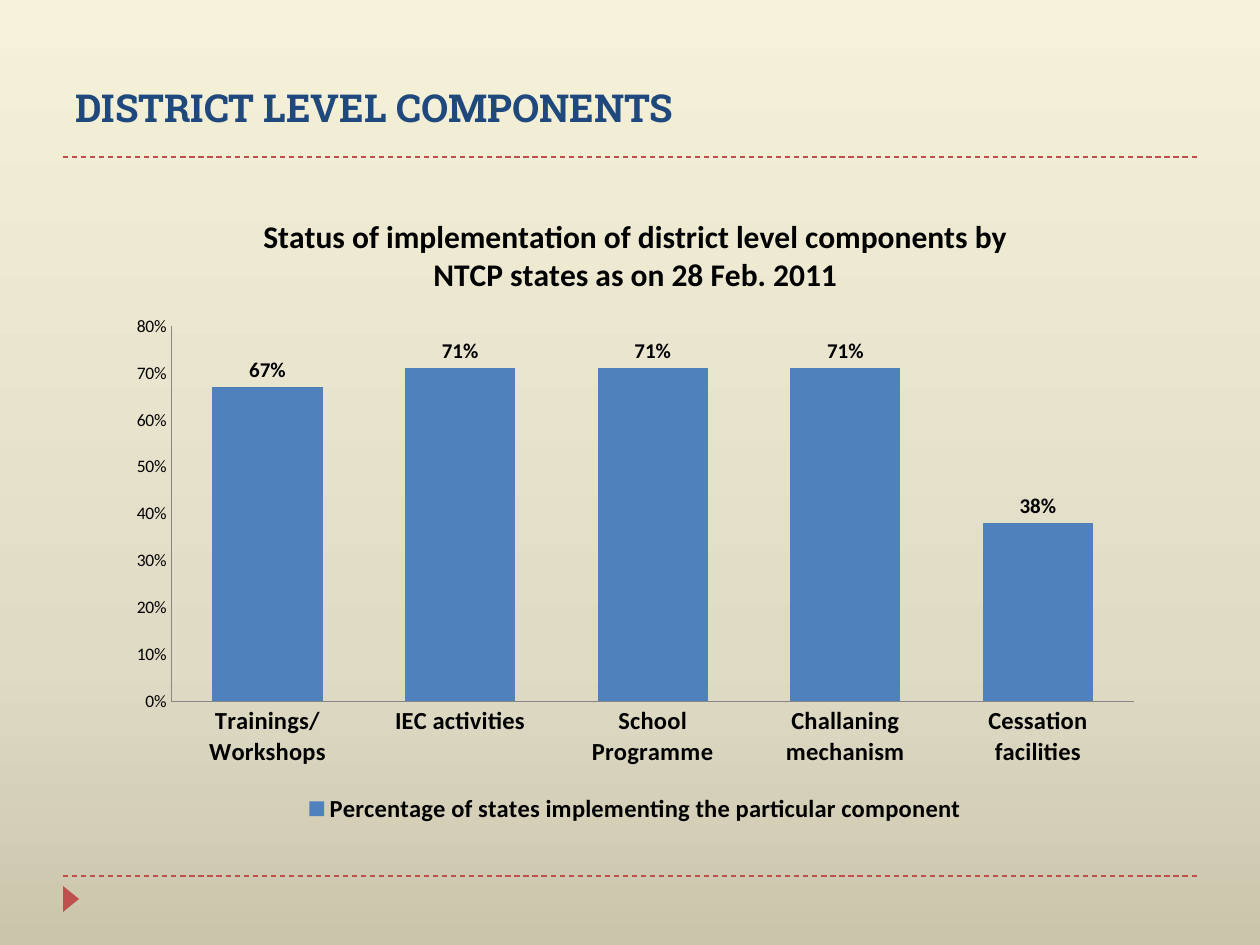
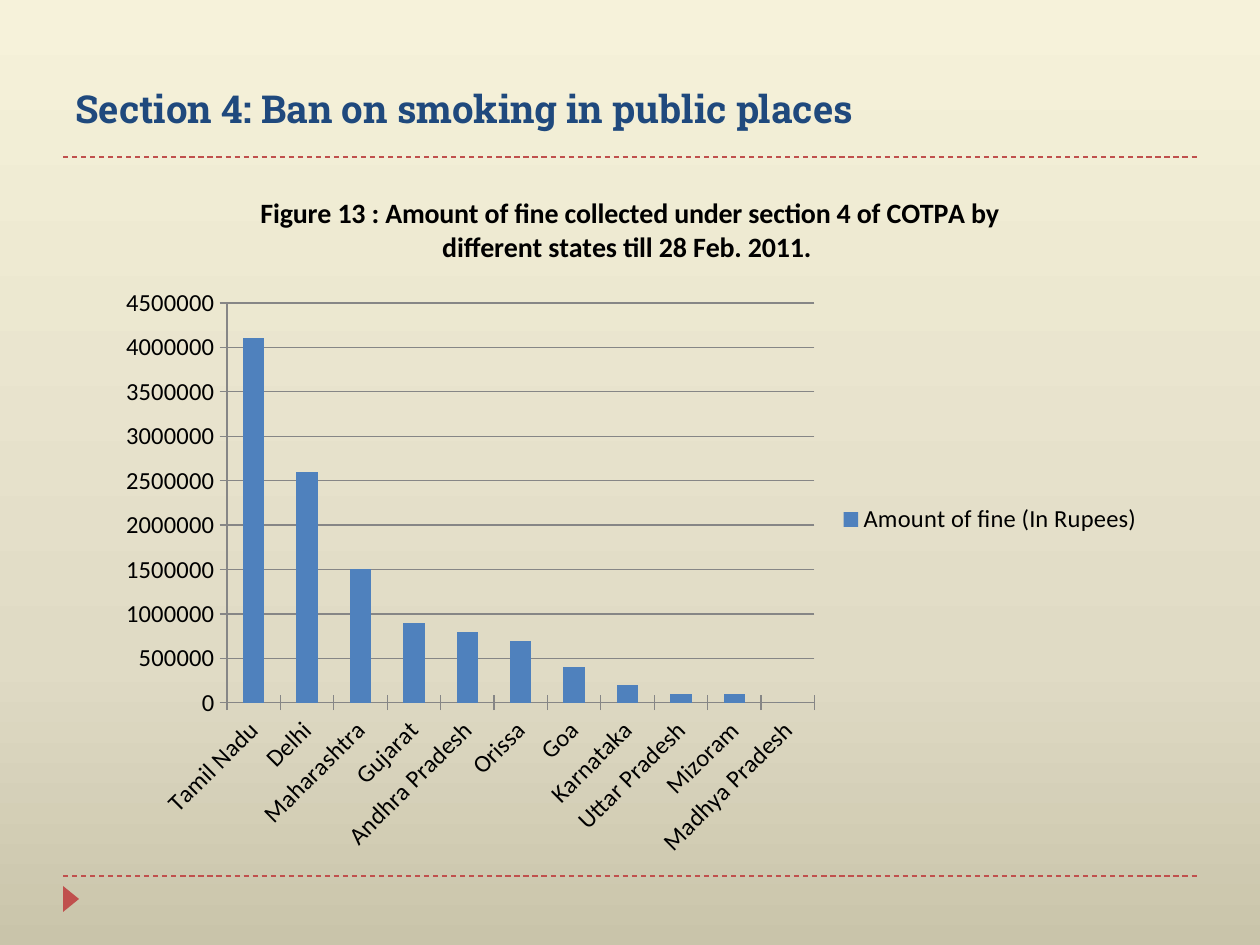
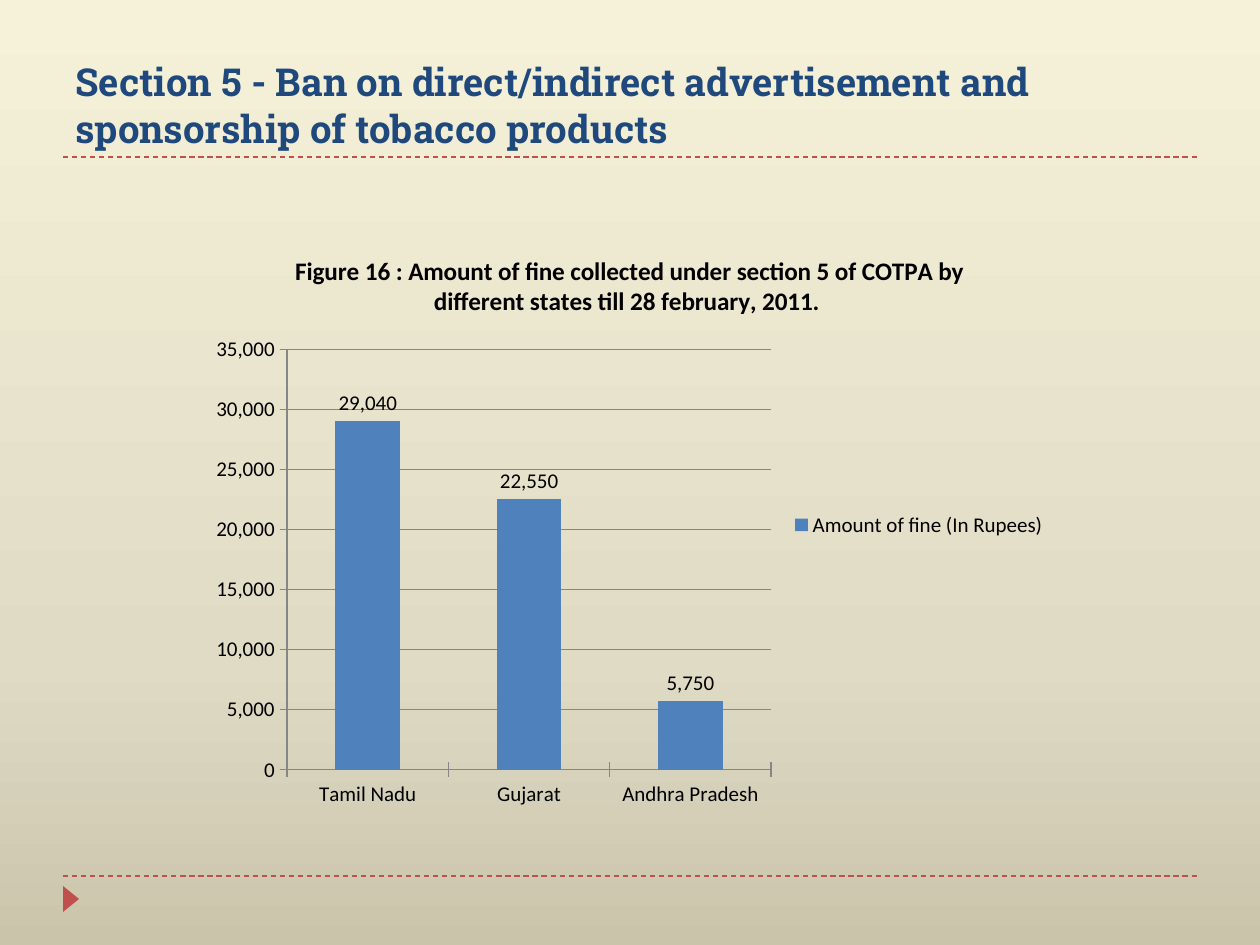
from lxml.etree import SubElement
from pptx import Presentation
from pptx.chart.data import CategoryChartData
from pptx.dml.color import RGBColor
from pptx.enum.chart import XL_CHART_TYPE, XL_LABEL_POSITION, XL_LEGEND_POSITION, XL_TICK_MARK
from pptx.enum.dml import MSO_LINE
from pptx.enum.shapes import MSO_CONNECTOR, MSO_SHAPE
from pptx.enum.text import MSO_ANCHOR, PP_ALIGN
from pptx.oxml.ns import qn
from pptx.util import Pt

# Content: boxes are left, top, width, height in px
SLIDES = [
    {
        "heading": "DISTRICT LEVEL COMPONENTS",
        "heading_box": (63, 63, 1134, 73),
        "chart_box": (116, 189, 1039, 640),
        "caption": "Status of implementation of district level components by NTCP states as on 28 Feb. 2011",
        "measure": "Percentage of states implementing the particular component",
        "values": {
            "Trainings/ Workshops": 0.67,
            "IEC activities": 0.71,
            "School Programme": 0.71,
            "Challaning mechanism": 0.71,
            "Cessation facilities": 0.38,
        },
        "format": "0%",
        "gap": 75,
        "grid": False,
        "tick": XL_TICK_MARK.NONE,
        "legend": XL_LEGEND_POSITION.BOTTOM,
        "text": {"size": 10},
        "caption_text": {"size": 18},
        "emphasis": {"size": 14, "bold": True},
        "labels": {"size": 12, "bold": True},
    },
    {
        "heading": "Section 4: Ban on smoking in public places",
        "heading_box": (63, 53, 1134, 84),
        "chart_box": (105, 168, 1050, 703),
        "caption": "Figure 13 : Amount of fine collected under section 4 of COTPA by different states till 28 Feb. 2011. ",
        "measure": "Amount of fine (In Rupees)",
        "values": {
            "Tamil Nadu": 4100000,
            "Delhi": 2600000,
            "Maharashtra": 1500000,
            "Gujarat": 900000,
            "Andhra Pradesh": 800000,
            "Orissa": 700000,
            "Goa": 400000,
            "Karnataka": 200000,
            "Uttar Pradesh": 100000,
            "Mizoram": 100000,
            "Madhya Pradesh": 0,
        },
        "format": "General",
        "gap": 150,
        "grid": True,
        "tick": XL_TICK_MARK.CROSS,
        "legend": XL_LEGEND_POSITION.RIGHT,
        "text": {"size": 14},
        "caption_text": {"size": 16},
        "emphasis": {"size": 14},
        "labels": None,
    },
    {
        "heading": "Section 5 - Ban on direct/indirect advertisement and sponsorship of tobacco products",
        "heading_box": (63, 21, 1134, 136),
        "chart_box": (199, 231, 861, 588),
        "caption": "Figure 16 : Amount of fine collected under section 5 of COTPA by different states till 28 february, 2011. ",
        "measure": "Amount of fine (In Rupees)",
        "values": {"Tamil Nadu": 29040, "Gujarat": 22550, "Andhra Pradesh": 5750},
        "format": "#,##0",
        "gap": 150,
        "grid": True,
        "tick": XL_TICK_MARK.CROSS,
        "legend": XL_LEGEND_POSITION.RIGHT,
        "text": {"size": 12},
        "caption_text": {"size": 14.4},
        "emphasis": {"size": 12},
        "labels": {"size": 12},
    },
]

THEME = {
    "heading": {"size": 22, "name": "Roboto Slab", "bold": True, "color": "1F497D"},
    "chart": {"name": "Calibri", "color": "000000"},
    "accent": "C0504D",
    "bar": "4F81BD",
    "axis": "868686",
    "background": [(0, "C9C4AA"), (30, "E0DBC5"), (100, "F6F2DA")],
    "rule_width": 0.75,
}

# Shared layout in px
SCALE = 914400 / 126
PAGE = (1260, 945)
RULE_ENDS = (63, 1197)
RULE_TOPS = (876, 157)
MARKER_BOX = (58, 891, 26, 16)


def emu(*lengths):
    return [round(length * SCALE) for length in lengths]


def rgb(code):
    return RGBColor.from_string(code)


def set_font(font, **values):
    for key, value in values.items():
        if key == "color":
            font.color.rgb = rgb(value)
        else:
            setattr(font, key, Pt(value) if key == "size" else value)


def set_line(line, color):
    line.color.rgb = rgb(color)
    line.width = Pt(THEME["rule_width"])


def paint_background(slide):
    fill = slide.background.fill
    fill.gradient()
    fill.gradient_angle = 90
    stops = slide.element.find(".//" + qn("a:gsLst"))
    for stop in list(stops):
        stops.remove(stop)
    for position, color in THEME["background"]:
        stop = SubElement(stops, qn("a:gs"), pos=str(position * 1000))
        SubElement(stop, qn("a:srgbClr"), val=color)


def add_frame(slide):
    """Dashed rules and the footer marker."""
    left, right = RULE_ENDS
    for top in RULE_TOPS:
        rule = slide.shapes.add_connector(MSO_CONNECTOR.STRAIGHT, *emu(left, top, right, top))
        set_line(rule.line, THEME["accent"])
        rule.line.dash_style = MSO_LINE.DASH
        SubElement(rule.element.spPr, qn("a:effectLst"))
    marker = slide.shapes.add_shape(MSO_SHAPE.ISOSCELES_TRIANGLE, *emu(*MARKER_BOX))
    marker.rotation = 90
    marker.shadow.inherit = False
    marker.fill.solid()
    marker.fill.fore_color.rgb = rgb(THEME["accent"])
    marker.line.fill.background()


def add_heading(slide, text, box):
    frame = slide.shapes.add_textbox(*emu(*box)).text_frame
    frame.word_wrap = True
    frame.vertical_anchor = MSO_ANCHOR.BOTTOM
    paragraph = frame.paragraphs[0]
    paragraph.alignment = PP_ALIGN.LEFT
    run = paragraph.add_run()
    run.text = text
    set_font(run.font, **THEME["heading"])


def add_bars(slide, content):
    data = CategoryChartData(number_format=content["format"])
    data.categories = list(content["values"])
    data.add_series(content["measure"], list(content["values"].values()))
    chart = slide.shapes.add_chart(
        XL_CHART_TYPE.COLUMN_CLUSTERED, *emu(*content["chart_box"]), data).chart
    set_font(chart.font, **THEME["chart"], **content["text"])

    # Caption
    chart.has_title = True
    caption = chart.chart_title.text_frame.paragraphs[0].add_run()
    caption.text = content["caption"]
    set_font(caption.font, **THEME["chart"], **content["caption_text"], bold=True)
    chart.chart_title.include_in_layout = False

    # Legend
    chart.has_legend = True
    chart.legend.position = content["legend"]
    chart.legend.include_in_layout = False
    set_font(chart.legend.font, **THEME["chart"], **content["emphasis"])

    # Axes
    for axis in (chart.category_axis, chart.value_axis):
        axis.major_tick_mark = content["tick"]
        axis.minor_tick_mark = XL_TICK_MARK.NONE
        set_line(axis.format.line, THEME["axis"])
    set_font(chart.category_axis.tick_labels.font, **THEME["chart"], **content["emphasis"])
    scale = chart.value_axis
    scale.tick_labels.number_format = content["format"]
    scale.tick_labels.number_format_is_linked = False
    scale.has_major_gridlines = content["grid"]
    if content["grid"]:
        set_line(scale.major_gridlines.format.line, THEME["axis"])

    # Bars and their values
    plot = chart.plots[0]
    plot.vary_by_categories = False
    plot.gap_width = content["gap"]
    bars = plot.series[0]
    bars.format.fill.solid()
    bars.format.fill.fore_color.rgb = rgb(THEME["bar"])
    if content["labels"]:
        labels = bars.data_labels
        settings = {
            "show_value": True,
            "number_format": content["format"],
            "number_format_is_linked": False,
            "position": XL_LABEL_POSITION.OUTSIDE_END,
        }
        for key, value in settings.items():
            setattr(labels, key, value)
        set_font(labels.font, **THEME["chart"], **content["labels"])


def main():
    deck = Presentation()
    deck.slide_width, deck.slide_height = emu(*PAGE)
    for content in SLIDES:
        slide = deck.slides.add_slide(deck.slide_layouts[6])
        paint_background(slide)
        add_frame(slide)
        add_heading(slide, content["heading"], content["heading_box"])
        add_bars(slide, content)
    deck.save("out.pptx")


if __name__ == "__main__":
    main()
